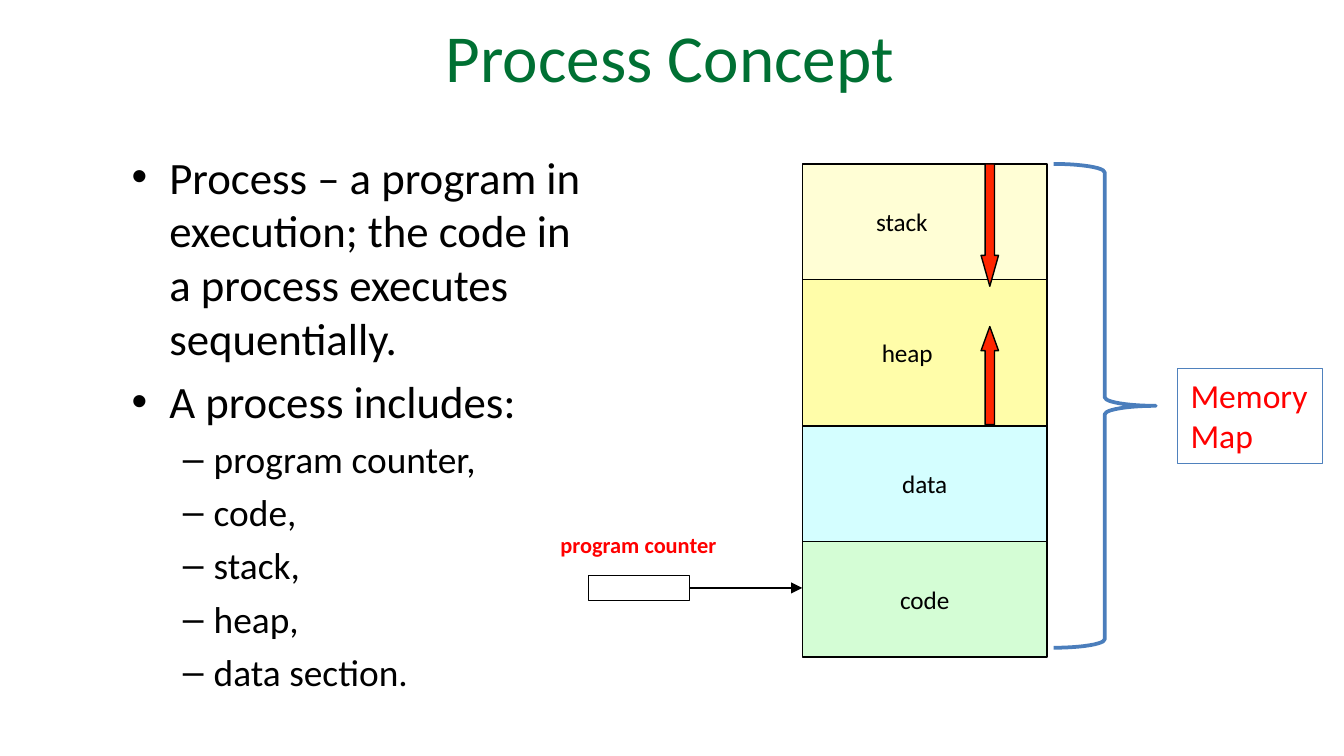
import pptx
import pptx.dml.color
import pptx.enum.shapes
import pptx.enum.text
import pptx.oxml
import pptx.oxml.ns
import pptx.util

Inches, Pt = pptx.util.Inches, pptx.util.Pt
SHAPE = pptx.enum.shapes.MSO_SHAPE
ALIGN = pptx.enum.text.PP_ALIGN
ANCHOR = pptx.enum.text.MSO_ANCHOR

COLORS = {
    "title": "007033", "black": "000000", "red": "FF0000", "arrow": "FF2600",
    "brace": "4B7EBC", "frame": "4F81BD",
    "stack": "FFFED5", "heap": "FFFDA9", "data": "D4FEFF", "code": "D4FDD5",
}
TITLE = "Process Concept"
POINTS = [  # level, text
    (0, "Process – a program in execution; the code in a process executes sequentially."),
    (0, "A process includes:"),
    (1, "program counter,"),
    (1, "code,"),
    (1, "stack,"),
    (1, "heap,"),
    (1, "data section."),
]
LEVELS = [
    {"bullet": "•", "size": 24, "before": 5.2, "left": 0.31, "hang": 0.28},
    {"bullet": "–", "size": 20, "before": 4.5, "left": 0.64, "hang": 0.23},
]
SEGMENTS = [  # name, height, label shift from the column centre
    ("stack", 0.86, -0.17),
    ("heap", 1.09, -0.13),
    ("data", 0.86, 0),
    ("code", 0.86, 0),
]
GROWTH = [  # shape, top, height, head length
    (SHAPE.UP_ARROW, 2.43, 0.73, 0.18),
    (SHAPE.DOWN_ARROW, 1.22, 0.91, 0.23),
]
SLIDE_WIDTH = Inches(10)
SLIDE_HEIGHT = SLIDE_WIDTH * 9 // 16
MAP_LEFT, MAP_TOP, MAP_WIDTH = 5.97, 1.22, 1.82
COUNTER = (4.38, 4.28, 0.75, 0.19)
ARROW_LEFT, ARROW_WIDTH, SHAFT_WIDTH = 7.3, 0.13, 0.07
LABEL_WIDTH, LABEL_HEIGHT = 0.82, 0.3


def rgb(name):
    return pptx.dml.color.RGBColor.from_string(COLORS[name])


def add_xml(parent, tag, attributes=""):
    namespace = pptx.oxml.ns.nsdecls("a")
    parent.append(pptx.oxml.parse_xml(f"<a:{tag} {namespace} {attributes}/>"))


def write(frame, text, size=13.5, color="black", bold=False, align=ALIGN.LEFT,
          anchor=ANCHOR.TOP, margins=(0.04, 0.04), wrap=True):
    """Put text, one paragraph a line, into a text frame."""
    frame.word_wrap = wrap
    frame.vertical_anchor = anchor
    frame.margin_left = frame.margin_right = Inches(margins[0])
    frame.margin_top = frame.margin_bottom = Inches(margins[1])
    for number, line in enumerate(text.split("\n")):
        paragraph = frame.add_paragraph() if number else frame.paragraphs[0]
        paragraph.text = line
        paragraph.alignment = align
        font = paragraph.runs[0].font
        font.name, font.size, font.bold = "Calibri", Pt(size), bold
        font.color.rgb = rgb(color)


def add_text(slide, box, text, **style):
    frame = slide.shapes.add_textbox(*map(Inches, box)).text_frame
    write(frame, text, **style)
    return frame


def add_shape(slide, kind, box, fill=None, line="black", weight=0.75):
    shape = slide.shapes.add_shape(kind, *map(Inches, box))
    shape.shadow.inherit = False
    if fill:
        shape.fill.solid()
        shape.fill.fore_color.rgb = rgb(fill)
    else:
        shape.fill.background()
    shape.line.color.rgb = rgb(line)
    shape.line.width = Pt(weight)
    return shape


def add_points(slide):
    frame = add_text(slide, (0.91, 1.07, 3.47, 4.09),
                     "\n".join(text for _, text in POINTS))
    for number, (paragraph, (depth, _)) in enumerate(zip(frame.paragraphs, POINTS)):
        level = LEVELS[depth]
        paragraph.level = depth
        properties = paragraph._p.get_or_add_pPr()
        properties.set("marL", str(Inches(level["left"])))
        properties.set("indent", str(-Inches(level["hang"])))
        if number:
            paragraph.space_before = Pt(level["before"])
        add_xml(properties, "buFont", 'typeface="Arial"')
        add_xml(properties, "buChar", f'char="{level["bullet"]}"')
        paragraph.runs[0].font.size = Pt(level["size"])


def add_memory_map(slide):
    top = MAP_TOP
    for name, height, shift in SEGMENTS:
        add_shape(slide, SHAPE.RECTANGLE, (MAP_LEFT, top, MAP_WIDTH, height), fill=name)
        label_left = MAP_LEFT + (MAP_WIDTH - LABEL_WIDTH) / 2 + shift
        label_top = top + (height - LABEL_HEIGHT) / 2
        add_text(slide, (label_left, label_top, LABEL_WIDTH, LABEL_HEIGHT), name,
                 align=ALIGN.CENTER, anchor=ANCHOR.MIDDLE)
        top += height
    for kind, arrow_top, height, head in GROWTH:
        arrow = add_shape(slide, kind, (ARROW_LEFT, arrow_top, ARROW_WIDTH, height),
                          fill="arrow")
        arrow.adjustments[0] = SHAFT_WIDTH / ARROW_WIDTH
        arrow.adjustments[1] = head / ARROW_WIDTH
    add_shape(slide, SHAPE.RIGHT_BRACE, (7.84, MAP_TOP, 0.76, 3.6), line="brace", weight=2)
    caption = add_shape(slide, SHAPE.RECTANGLE, (8.76, 2.74, 1.08, 0.71), line="frame")
    write(caption.text_frame, "Memory\nMap", size=18, color="red",
          margins=(0.1, 0.05), wrap=False)


def add_program_counter(slide):
    add_shape(slide, SHAPE.RECTANGLE, COUNTER)
    left, top, width, height = COUNTER
    middle = Inches(top + height / 2)
    pointer = slide.shapes.add_connector(
        pptx.enum.shapes.MSO_CONNECTOR.STRAIGHT,
        Inches(left + width), middle, Inches(MAP_LEFT), middle)
    pointer.line.color.rgb = rgb("black")
    pointer.line.width = Pt(0.75)
    add_xml(pointer.line._get_or_add_ln(), "tailEnd", 'type="triangle"')
    add_xml(pointer._element.spPr, "effectLst")
    add_text(slide, (4.13, 3.91, 1.49, 0.19), "program counter",
             size=12, color="red", bold=True)


def main():
    deck = pptx.Presentation()
    deck.slide_width, deck.slide_height = SLIDE_WIDTH, SLIDE_HEIGHT
    slide = deck.slides.add_slide(deck.slide_layouts[5])
    title = slide.shapes.title
    title.left, title.top, title.width, title.height = map(Inches, (2.02, 0, 5.93, 0.83))
    write(title.text_frame, TITLE, size=36, color="title",
          align=ALIGN.CENTER, anchor=ANCHOR.MIDDLE)
    add_points(slide)
    add_memory_map(slide)
    add_program_counter(slide)
    deck.save("out.pptx")


if __name__ == "__main__":
    main()
